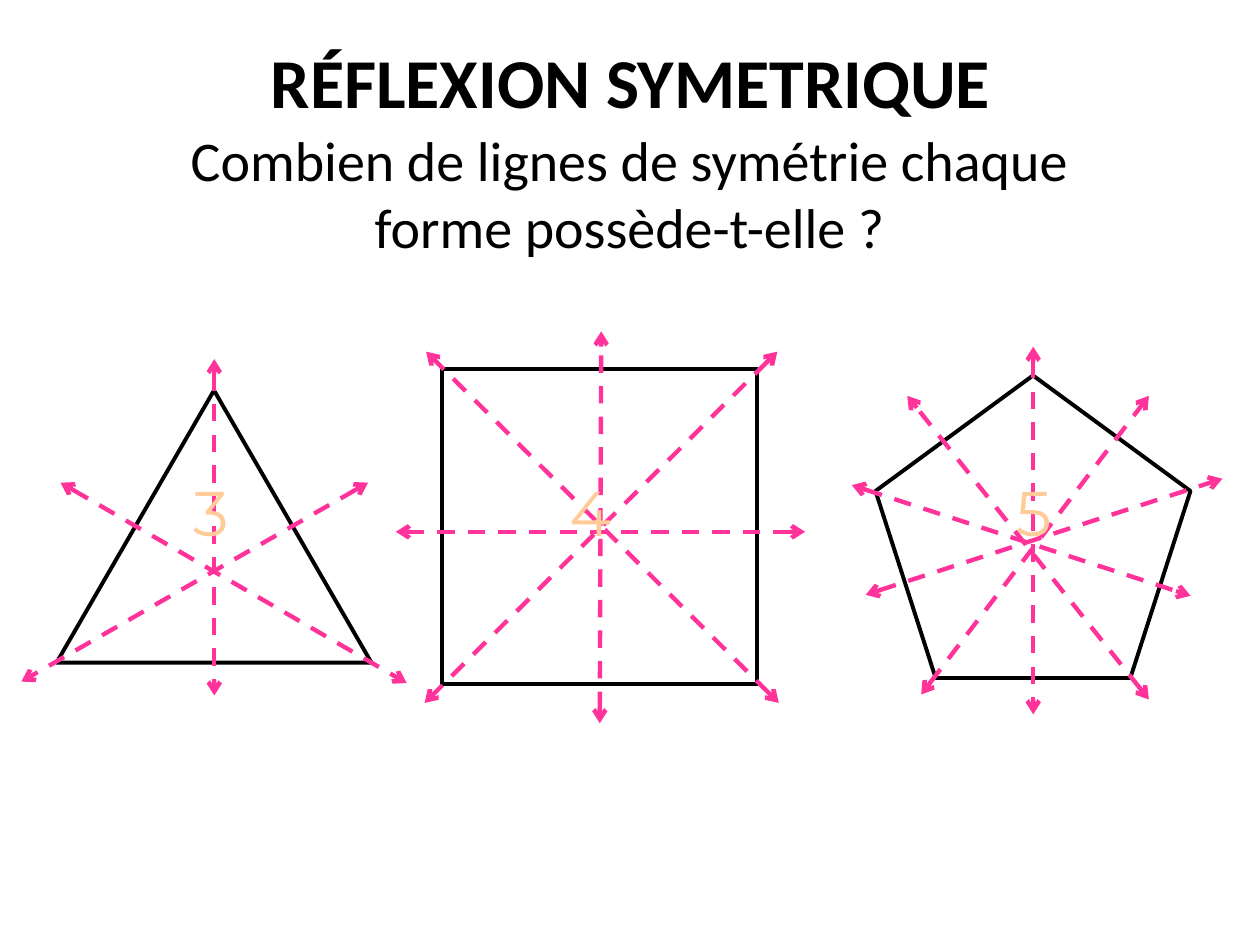
from dataclasses import dataclass

from lxml.etree import SubElement
from pptx import Presentation
from pptx.dml.color import RGBColor as Rgb
from pptx.enum.dml import MSO_LINE as Dash
from pptx.enum.shapes import MSO_CONNECTOR as Link, MSO_SHAPE as Form
from pptx.enum.text import MSO_ANCHOR as Anchor, MSO_AUTO_SIZE as Fit, PP_ALIGN as Align
from pptx.oxml.ns import qn
from pptx.util import Cm, Pt


@dataclass
class Theme:
    ink = Rgb.from_string("000000")
    axis = Rgb.from_string("FF3399")
    glow = Rgb.from_string("FFCC99")
    shade = Rgb.from_string("765E47")
    body = "Calibri"
    digit = "Montserrat"
    head = Pt(40)
    ask = Pt(32)
    count = Pt(36)
    edge = Pt(2.25)
    dash = Pt(2.5)


def style(box, text, face, size, wrap=True, fit=Fit.NONE):
    frame = box.text_frame
    frame.word_wrap = wrap
    frame.auto_size = fit
    frame.vertical_anchor = Anchor.TOP
    para = frame.paragraphs[0]
    para.text = text
    para.alignment = Align.CENTER
    para.font.name = face
    para.font.size = size
    return para


theme = Theme()
deck = Presentation()
deck.slide_width, deck.slide_height = Cm(25.4), Cm(19.05)
slide = deck.slides.add_slide(deck.slide_layouts[5])
shapes = slide.shapes

title = shapes.title
title.left, title.top, title.width, title.height = Cm(0.43), Cm(0.64), Cm(24.56), Cm(1.96)
para = style(title, "RÉFLEXION SYMETRIQUE", theme.body, theme.head, fit=Fit.SHAPE_TO_FIT_TEXT)
para.font.bold = True
para.font.color.rgb = theme.ink

ask = shapes.add_textbox(Cm(2.79), Cm(2.41), Cm(19.81), Cm(3))
para = style(ask, "Combien de lignes de symétrie chaque forme possède-t-elle ?",
             theme.body, theme.ask, fit=Fit.SHAPE_TO_FIT_TEXT)
para.font.color.rgb = theme.ink

figures = [
    (Form.ISOSCELES_TRIANGLE, (1.14, 7.87, 6.35, 5.49), 3.4, [
        (4.32, 7.24, 4.32, 14.02),
        (7.42, 9.73, 0.43, 13.74),
        (1.22, 9.73, 8.2, 13.77),
    ]),
    (Form.RECTANGLE, (8.92, 7.44, 6.35, 6.35), 11.05, [
        (15.7, 14.17, 8.59, 7.09),
        (15.67, 7.09, 8.56, 14.17),
        (16.23, 10.72, 7.98, 10.72),
        (12.09, 14.58, 12.12, 6.68),
    ]),
    (Form.REGULAR_PENTAGON, (17.65, 7.57, 6.35, 6.1), 19.99, [
        (20.83, 6.99, 20.83, 14.4),
        (17.17, 9.78, 24, 12.01),
        (18.57, 14, 23.16, 7.98),
        (23.16, 14.1, 18.29, 7.98),
        (17.45, 11.99, 24.64, 9.65),
    ]),
]

for form, place, left, axes in figures:
    figure = shapes.add_shape(form, *map(Cm, place))
    figure.shadow.inherit = False
    figure.fill.background()
    figure.line.color.rgb = theme.ink
    figure.line.width = theme.edge

    for ends in axes:
        axis = shapes.add_connector(Link.STRAIGHT, *map(Cm, ends))
        axis.line.color.rgb = theme.axis
        axis.line.width = theme.dash
        axis.line.dash_style = Dash.DASH
        props = axis._element.spPr
        for tag in ("a:headEnd", "a:tailEnd"):
            SubElement(props.find(qn("a:ln")), qn(tag), type="arrow")
        SubElement(props, qn("a:effectLst"))

    count = shapes.add_textbox(Cm(left), Cm(9.42), Cm(1.7), Cm(2.44))
    para = style(count, str(len(axes)), theme.digit, theme.count, wrap=False)
    fill = para.runs[0].font.fill
    fill.gradient()
    fill.gradient_angle = 270
    for stop, color in zip(fill.gradient_stops, (theme.glow, theme.shade)):
        stop.color.rgb = color

deck.save("out.pptx")
